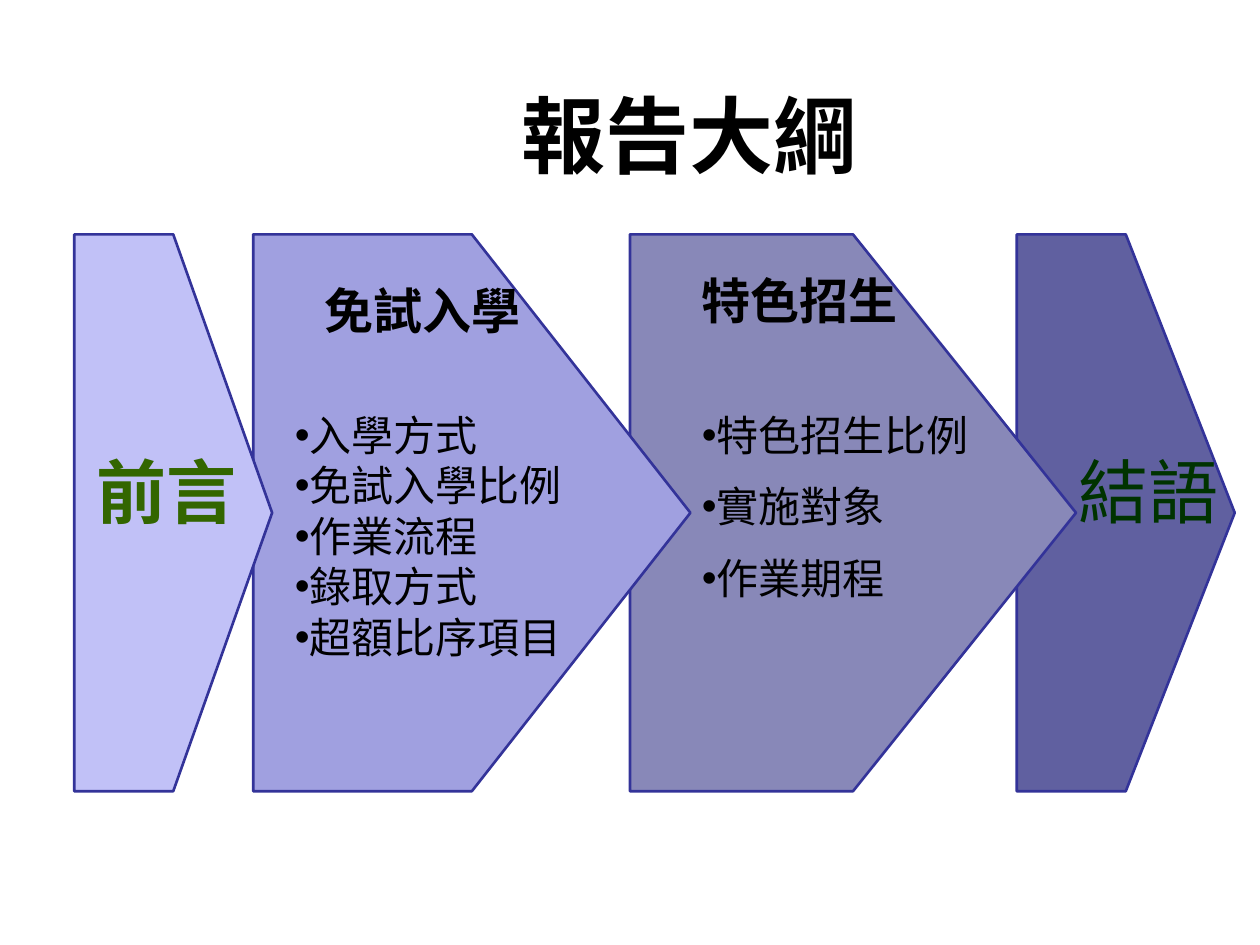
from dataclasses import dataclass

from lxml import etree
from pptx import Presentation
from pptx.dml.color import RGBColor
from pptx.enum import shapes, text
from pptx.oxml.ns import qn
from pptx.util import Inches, Pt


@dataclass(frozen=True)
class Theme:
    font: str = "Arial"
    ink: str = "000000"
    edge: str = "333399"
    start: str = "336600"
    end: str = "003300"
    title: int = 48
    label: int = 40
    head: int = 28
    item: int = 24


THEME = Theme()
TOP, HIGH = 1.86, 4.42

# left, width, fill; from back to front
ARROWS = [
    (8.07, 1.73, "6060A0"),
    (5, 3.54, "8888B8"),
    (2.01, 3.47, "A0A0E0"),
    (0.59, 1.57, "C1C1F7"),
]
ENTRY = ["入學方式", "免試入學比例", "作業流程", "錄取方式", "超額比序項目"]
SPECIAL = ["特色招生比例", "實施對象", "作業期程"]


def add_arrow(slide, left, width, fill):
    arrow = slide.shapes.add_shape(
        shapes.MSO_SHAPE.PENTAGON,
        Inches(left), Inches(TOP), Inches(width), Inches(HIGH))
    arrow.adjustments[0] = 0.5
    arrow.shadow.inherit = False
    arrow.fill.solid()
    arrow.fill.fore_color.rgb = RGBColor.from_string(fill)
    arrow.line.color.rgb = RGBColor.from_string(THEME.edge)
    arrow.line.width = Pt(1.5)


def add_bullet(para):
    props = para._p.get_or_add_pPr()
    props.set("marL", "0")
    props.set("indent", "0")
    color = etree.SubElement(props, qn("a:buClr"))
    etree.SubElement(color, qn("a:srgbClr"), val=THEME.ink)
    etree.SubElement(props, qn("a:buSzPct"), val="101000")
    etree.SubElement(props, qn("a:buFont"), typeface=THEME.font)
    etree.SubElement(props, qn("a:buChar"), char="•")


def write(box, lines, size, color=THEME.ink, bold=False, gap=0, bullet=False,
          align=text.PP_ALIGN.LEFT, anchor=text.MSO_ANCHOR.TOP):
    """Fill a box with one paragraph per line; gap is the space between them."""
    frame = box.text_frame
    frame.word_wrap = True
    frame.auto_size = text.MSO_AUTO_SIZE.NONE
    frame.vertical_anchor = anchor
    for i, line in enumerate(lines):
        para = frame.add_paragraph() if i else frame.paragraphs[0]
        para.alignment = align
        para.line_spacing = 1.0
        para.space_before = Pt(gap if i else 0)
        if bullet:
            add_bullet(para)
        run = para.add_run()
        run.text = line
        run.font.name = THEME.font
        run.font.size = Pt(size)
        run.font.bold = bold
        run.font.color.rgb = RGBColor.from_string(color)


def add_label(slide, line, left, top, width, height, **style):
    box = slide.shapes.add_textbox(
        Inches(left), Inches(top), Inches(width), Inches(height))
    write(box, [line], **style)


def place(holder, left, top, width, height):
    """Position a placeholder and bring it in front of the arrows."""
    holder.left, holder.top = Inches(left), Inches(top)
    holder.width, holder.height = Inches(width), Inches(height)
    holder.element.getparent().append(holder.element)
    return holder


def main():
    deck = Presentation()
    deck.slide_width, deck.slide_height = Inches(10), Inches(7.5)
    slide = deck.slides.add_slide(deck.slide_layouts[3])
    title, entry, special = slide.placeholders

    for arrow in ARROWS:
        add_arrow(slide, *arrow)

    add_label(slide, "前言", 0.67, 3.51, 1.34, 0.77,
              size=THEME.label, color=THEME.start, bold=True)
    add_label(slide, "結語", 8.46, 3.51, 1.34, 0.77,
              size=THEME.label, color=THEME.end)
    add_label(slide, "免試入學", 2.48, 2.18, 1.89, 0.57,
              size=THEME.head, bold=True)
    add_label(slide, "特色招生", 5.47, 2.1, 1.89, 0.57,
              size=THEME.head, bold=True)

    write(place(entry, 2.24, 3.2, 2.76, 3.1), ENTRY, THEME.item, bullet=True)
    write(place(title, 2.48, 0.44, 5.98, 1.25), ["報告大綱"], THEME.title,
          bold=True, align=text.PP_ALIGN.CENTER,
          anchor=text.MSO_ANCHOR.MIDDLE)
    write(place(special, 5.47, 3.2, 2.6, 2.3), SPECIAL, THEME.item,
          gap=12, bullet=True)

    deck.save("out.pptx")


if __name__ == "__main__":
    main()
